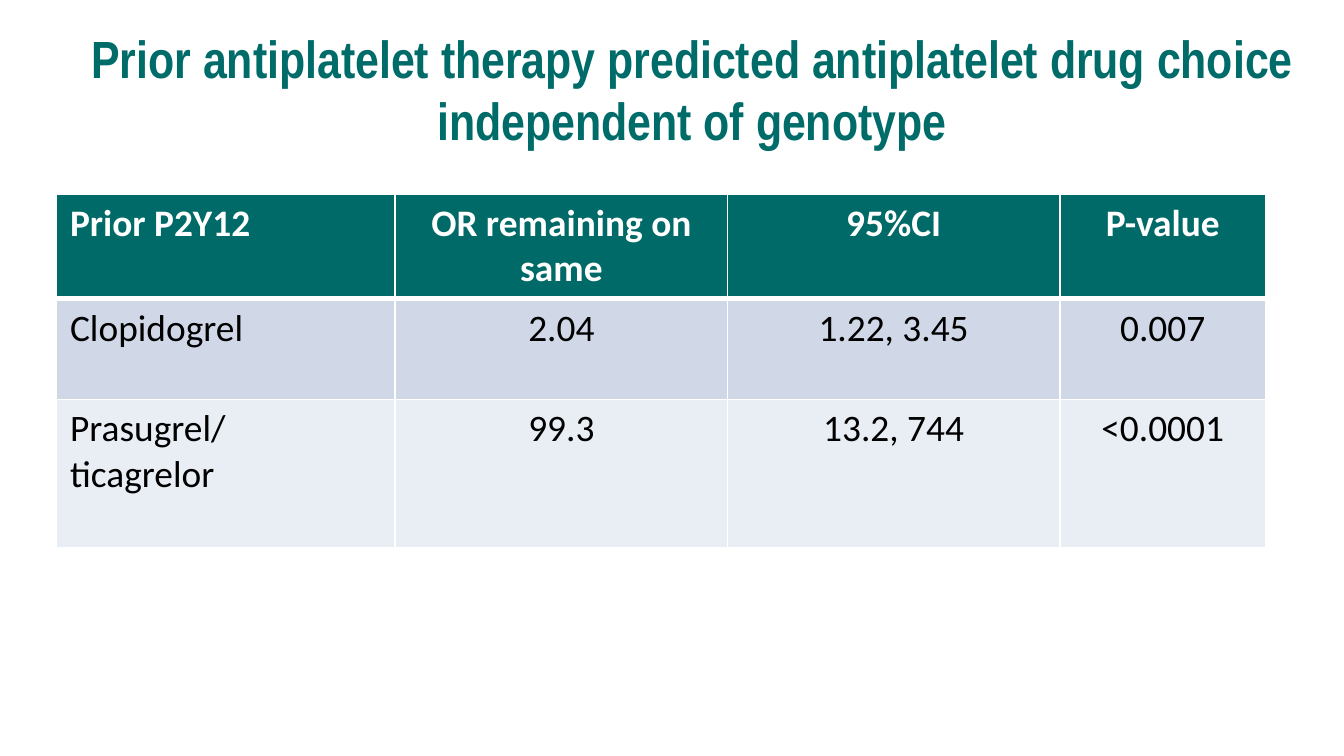
import pptx
import pptx.dml.color
import pptx.enum.text
import pptx.oxml
import pptx.oxml.ns
import pptx.util

Cm = pptx.util.Cm
Pt = pptx.util.Pt
ALIGN = pptx.enum.text.PP_ALIGN
COLORS = {
    "title": "006C69",
    "head": "006A68",
    "odd": "D0D8E8",
    "even": "E9EDF4",
    "light": "FFFFFF",
    "dark": "000000",
}
FORMS = {
    "title": {"name": "Arial Narrow", "size": Pt(28), "bold": True},
    "head": {"name": "Calibri", "size": Pt(20), "bold": True},
    "body": {"name": "Calibri", "size": Pt(20), "bold": False},
}
ROWS = [
    ["Prior P2Y12", "OR remaining on same", "95%CI", "P-value"],
    ["Clopidogrel", "2.04", "1.22, 3.45", "0.007"],
    ["Prasugrel/\nticagrelor", "99.3", "13.2, 744", "<0.0001"],
]
WIDTHS = [6.4, 6.28, 6.28, 3.89]
HEIGHTS = [1.9, 1.9, 2.8]


class Page:
    def __init__(self, slide):
        self.slide = slide

    def color(self, key):
        return pptx.dml.color.RGBColor.from_string(COLORS[key])

    def label(self, frame, text, form, ink, align):
        frame.text = text
        for para in frame.paragraphs:
            para.alignment = align
            for run in para.runs:
                for name, value in FORMS[form].items():
                    setattr(run.font, name, value)
                run.font.color.rgb = self.color(ink)

    def title(self, text, left, top, width, height):
        box = self.slide.shapes.add_textbox(Cm(left), Cm(top), Cm(width), Cm(height))
        frame = box.text_frame
        frame.word_wrap = True
        frame.auto_size = pptx.enum.text.MSO_AUTO_SIZE.NONE
        frame.vertical_anchor = pptx.enum.text.MSO_ANCHOR.MIDDLE
        self.label(frame, text, "title", "title", ALIGN.CENTER)

    def edge(self, cell, side, width):
        """Draw one white border; call before the cell's fill is set."""
        cell._tc.get_or_add_tcPr().append(pptx.oxml.parse_xml(
            f'<a:ln{side} {pptx.oxml.ns.nsdecls("a")} w="{Pt(width)}">'
            f'<a:solidFill><a:srgbClr val="{COLORS["light"]}"/></a:solidFill>'
            f'</a:ln{side}>'))

    def table(self, rows, left, top):
        grid = self.slide.shapes.add_table(
            len(rows), len(WIDTHS), Cm(left), Cm(top),
            Cm(sum(WIDTHS)), Cm(sum(HEIGHTS))).table
        for col, width in zip(grid.columns, WIDTHS):
            col.width = Cm(width)
        for row, height in zip(grid.rows, HEIGHTS):
            row.height = Cm(height)
        for r, texts in enumerate(rows):
            head = r == 0
            fill = "head" if head else ("even", "odd")[r % 2]
            for c, text in enumerate(texts):
                cell = grid.cell(r, c)
                for side in "LRTB":
                    thick = (head and side == "B") or (r == 1 and side == "T")
                    self.edge(cell, side, 3 if thick else 1)
                cell.fill.solid()
                cell.fill.fore_color.rgb = self.color(fill)
                self.label(cell.text_frame, text, "head" if head else "body",
                           "light" if head else "dark",
                           ALIGN.CENTER if c else ALIGN.LEFT)


def main():
    deck = pptx.Presentation()
    deck.slide_width, deck.slide_height = Cm(25.4), Cm(14.28)
    page = Page(deck.slides.add_slide(deck.slide_layouts[6]))
    page.title("Prior antiplatelet therapy predicted antiplatelet drug choice "
               "independent of genotype", 1.24, 1.09, 23.67, 1.17)
    page.table(ROWS, 1.07, 3.66)
    deck.save("out.pptx")


if __name__ == "__main__":
    main()
